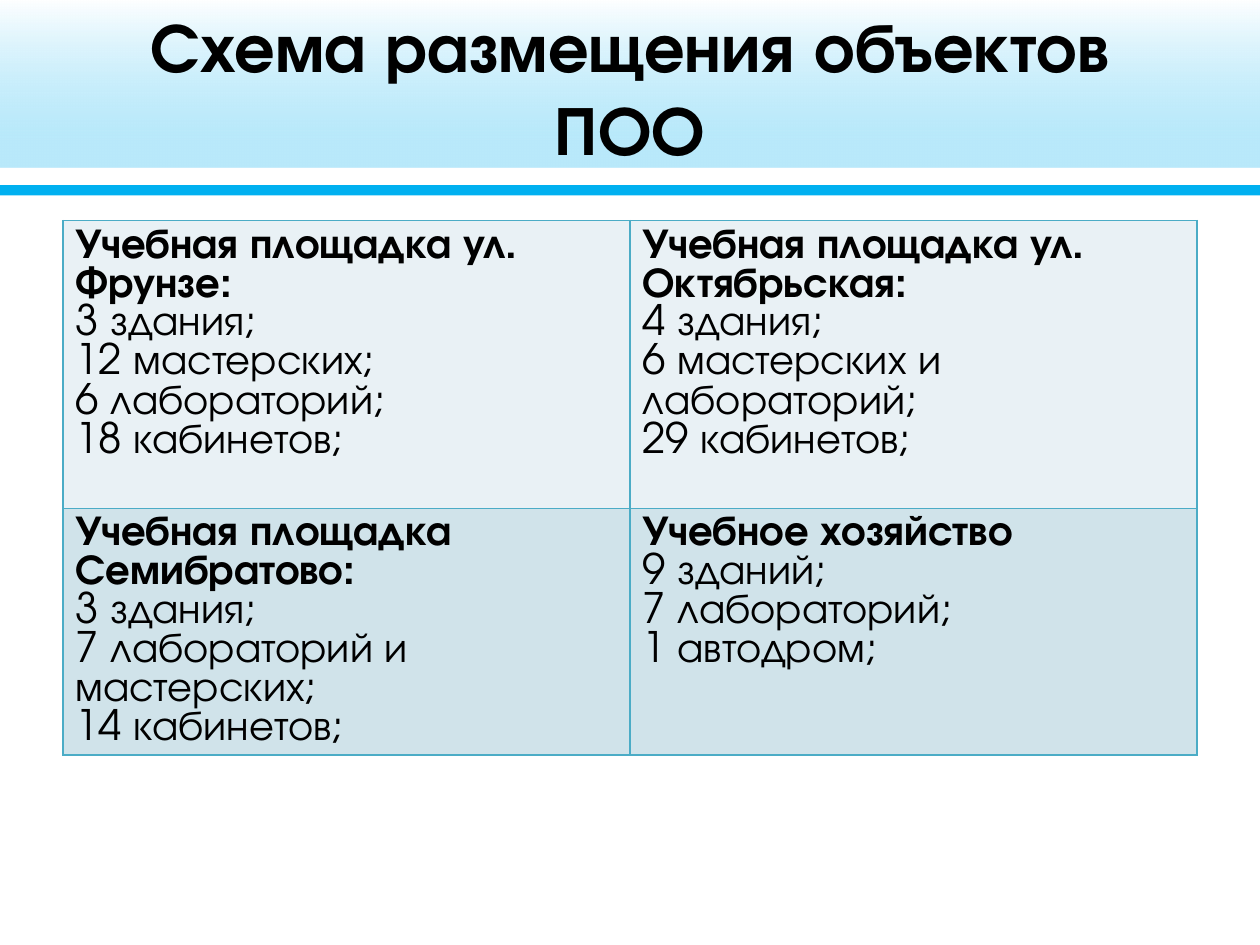
import pptx
import pptx.dml.color
import pptx.enum.shapes
import pptx.enum.text
import pptx.oxml
import pptx.oxml.ns
import pptx.util
from lxml import etree

COLORS = {
    "white": "FFFFFF",
    "sky": "00B0F0",
    "text": "000000",
    "border": "4BACC6",
    "light row": "E9F1F5",
    "dark row": "D0E3EA",
}
WIDTH, HEIGHT = 10, 7.5

SITES = [
    [
        ["Учебная площадка ул. Фрунзе:", "3 здания;", "12 мастерских;",
         "6 лабораторий;", "18 кабинетов;"],
        ["Учебная площадка ул. Октябрьская:", "4 здания;",
         "6 мастерских и лабораторий;", "29 кабинетов;"],
    ],
    [
        ["Учебная площадка Семибратово:", "3 здания;",
         "7 лабораторий и мастерских;", "14 кабинетов;"],
        ["Учебное хозяйство", "9 зданий;", "7 лабораторий;", "1 автодром;"],
    ],
]


def rgb(name):
    return pptx.dml.color.RGBColor.from_string(COLORS[name])


def add_element(parent, tag, **attributes):
    return etree.SubElement(parent, pptx.oxml.ns.qn(tag), attributes)


class SlidePainter:
    font = "TeX Gyre Adventor"

    def __init__(self, page):
        self.page = page

    def place(self, left, top, width, height):
        """Turn shares of the slide's size into lengths."""
        return [pptx.util.Inches(share * size) for share, size in
                zip((left, top, width, height), (WIDTH, HEIGHT) * 2)]

    def style(self, para, size, bold):
        for span in para.runs:
            span.font.name = self.font
            span.font.size = pptx.util.Pt(size)
            span.font.bold = bold
            span.font.color.rgb = rgb("text")

    def band(self, area, color=None, stops=()):
        """Draw a plain band, or a vertical fade of (position, color, opacity)."""
        box = self.page.shapes.add_shape(
            pptx.enum.shapes.MSO_SHAPE.RECTANGLE, *self.place(*area))
        box.shadow.inherit = False
        box.line.fill.background()
        if color:
            box.fill.solid()
            box.fill.fore_color.rgb = rgb(color)
            return
        box.fill.gradient()
        box.fill.gradient_angle = 270
        for stop, (position, name, opacity) in zip(box.fill.gradient_stops, stops):
            stop.position = position
            stop.color.rgb = rgb(name)
        for element, (position, name, opacity) in zip(
                box.element.iter(pptx.oxml.ns.qn("a:srgbClr")), stops):
            add_element(element, "a:alpha", val=str(opacity * 1000))

    def title(self, area, text, size):
        box = self.page.shapes.add_textbox(*self.place(*area))
        frame = box.text_frame
        frame.word_wrap = True
        frame.vertical_anchor = pptx.enum.text.MSO_ANCHOR.MIDDLE
        frame.text = text
        para = frame.paragraphs[0]
        para.alignment = pptx.enum.text.PP_ALIGN.CENTER
        self.style(para, size, True)

    def cell(self, cell, lines, color, size, leading):
        cell.text_frame.text = "\n".join(lines)
        for index, para in enumerate(cell.text_frame.paragraphs):
            para.line_spacing = pptx.util.Pt(leading)
            self.style(para, size, index == 0)
        # Borders come before the fill in the cell's properties
        properties = cell._tc.get_or_add_tcPr()
        for side in ("a:lnL", "a:lnR", "a:lnT", "a:lnB"):
            line = add_element(properties, side, w=str(pptx.util.Pt(1)))
            add_element(add_element(line, "a:solidFill"), "a:srgbClr",
                        val=COLORS["border"])
        cell.fill.solid()
        cell.fill.fore_color.rgb = rgb(color)

    def table(self, area, rows, shares, colors, size, leading):
        left, top, width, height = self.place(*area)
        table = self.page.shapes.add_table(
            len(rows), len(rows[0]), left, top, width, height).table
        table.first_row = False
        table.horz_banding = False
        for row, share in zip(table.rows, shares):
            row.height = int(height * share)
        for row, texts, color in zip(table.rows, rows, colors):
            for cell, lines in zip(row.cells, texts):
                self.cell(cell, lines, color, size, leading)


def main():
    deck = pptx.Presentation()
    deck.slide_width = pptx.util.Inches(WIDTH)
    deck.slide_height = pptx.util.Inches(HEIGHT)
    painter = SlidePainter(deck.slides.add_slide(deck.slide_layouts[6]))

    # Header: soft fade, accent stripe, blue fade
    header = 1.33 / HEIGHT
    painter.band((0, 0, 1, header),
                 stops=[(0, "white", 80), (1, "white", 23)])
    painter.band((0, 1.47 / HEIGHT, 1.01, 0.08 / HEIGHT), color="sky")
    painter.band((0, 0, 1.01, header),
                 stops=[(0, "white", 46), (0.84, "sky", 27)])
    painter.title((0.05, 0.06 / HEIGHT, 0.9, 1.25 / HEIGHT),
                  "Схема размещения объектов ПОО", 39.6)

    # Sites and their buildings
    painter.table((0.05, 1.75 / HEIGHT, 0.9, 4.23 / HEIGHT), SITES,
                  (0.54, 0.46), ("light row", "dark row"), 24, 22.3)

    deck.save("out.pptx")


if __name__ == "__main__":
    main()
